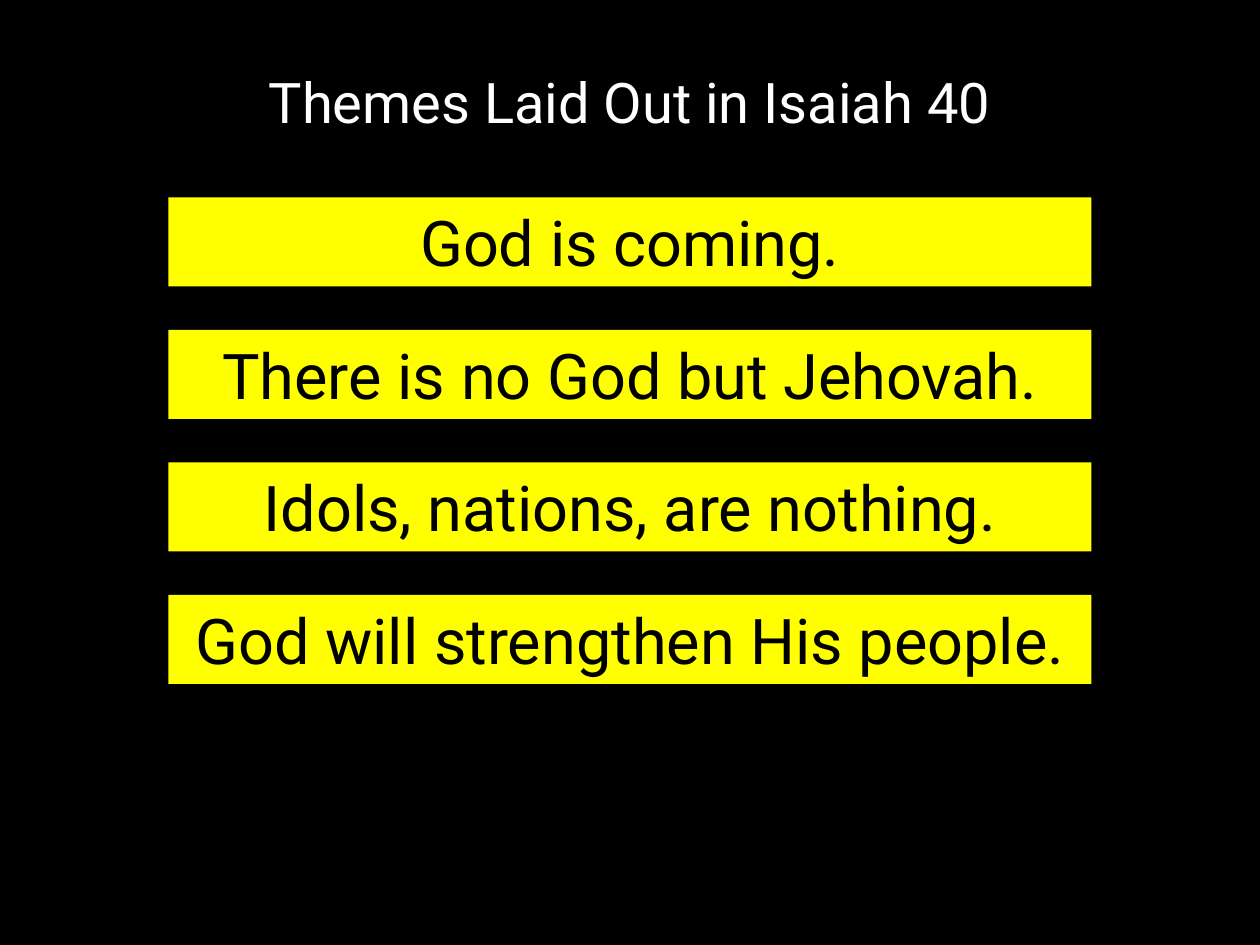
from pptx import Presentation
from pptx.dml.color import RGBColor
from pptx.enum.shapes import MSO_SHAPE
from pptx.enum.text import MSO_ANCHOR, MSO_AUTO_SIZE, PP_ALIGN
from pptx.util import Pt

BLACK = RGBColor(0, 0, 0)
WHITE = RGBColor(255, 255, 255)
YELLOW = RGBColor(255, 255, 0)

THEMES = [
    "God is coming.",
    "There is no God but Jehovah.",
    "Idols, nations, are nothing.",
    "God will strengthen His people.",
]


class Deck:
    font = "Roboto"

    def __init__(self, slide):
        self.slide = slide
        fill = slide.background.fill
        fill.solid()
        fill.fore_color.rgb = BLACK

    def label(self, shape, text, size, color):
        """Put one centred line in the shape and return its paragraph."""
        frame = shape.text_frame
        frame.word_wrap = True
        frame.vertical_anchor = MSO_ANCHOR.TOP
        line = frame.paragraphs[0]
        line.text = text
        line.alignment = PP_ALIGN.CENTER
        line.font.name = self.font
        line.font.size = Pt(size)
        line.font.color.rgb = color
        return line

    def title(self, text, left, top, width, height):
        box = self.slide.shapes.add_textbox(
            Pt(left), Pt(top), Pt(width), Pt(height))
        self.label(box, text, 32, WHITE).line_spacing = 0.9

    def bar(self, text, left, top, width, height):
        bar = self.slide.shapes.add_shape(
            MSO_SHAPE.RECTANGLE, Pt(left), Pt(top), Pt(width), Pt(height))
        bar.shadow.inherit = False
        bar.fill.solid()
        bar.fill.fore_color.rgb = YELLOW
        bar.line.fill.background()
        self.label(bar, text, 36, BLACK)
        bar.text_frame.auto_size = MSO_AUTO_SIZE.SHAPE_TO_FIT_TEXT


def main():
    show = Presentation()
    show.slide_width, show.slide_height = Pt(720), Pt(540)
    deck = Deck(show.slides.add_slide(show.slide_layouts[6]))
    deck.title("Themes Laid Out in Isaiah 40", 49.5, 39.5, 621, 48)
    for row, theme in enumerate(THEMES):
        deck.bar(theme, 96.25, 112.75 + row * 75.75, 527.5, 50.9)
    show.save("out.pptx")


if __name__ == "__main__":
    main()
